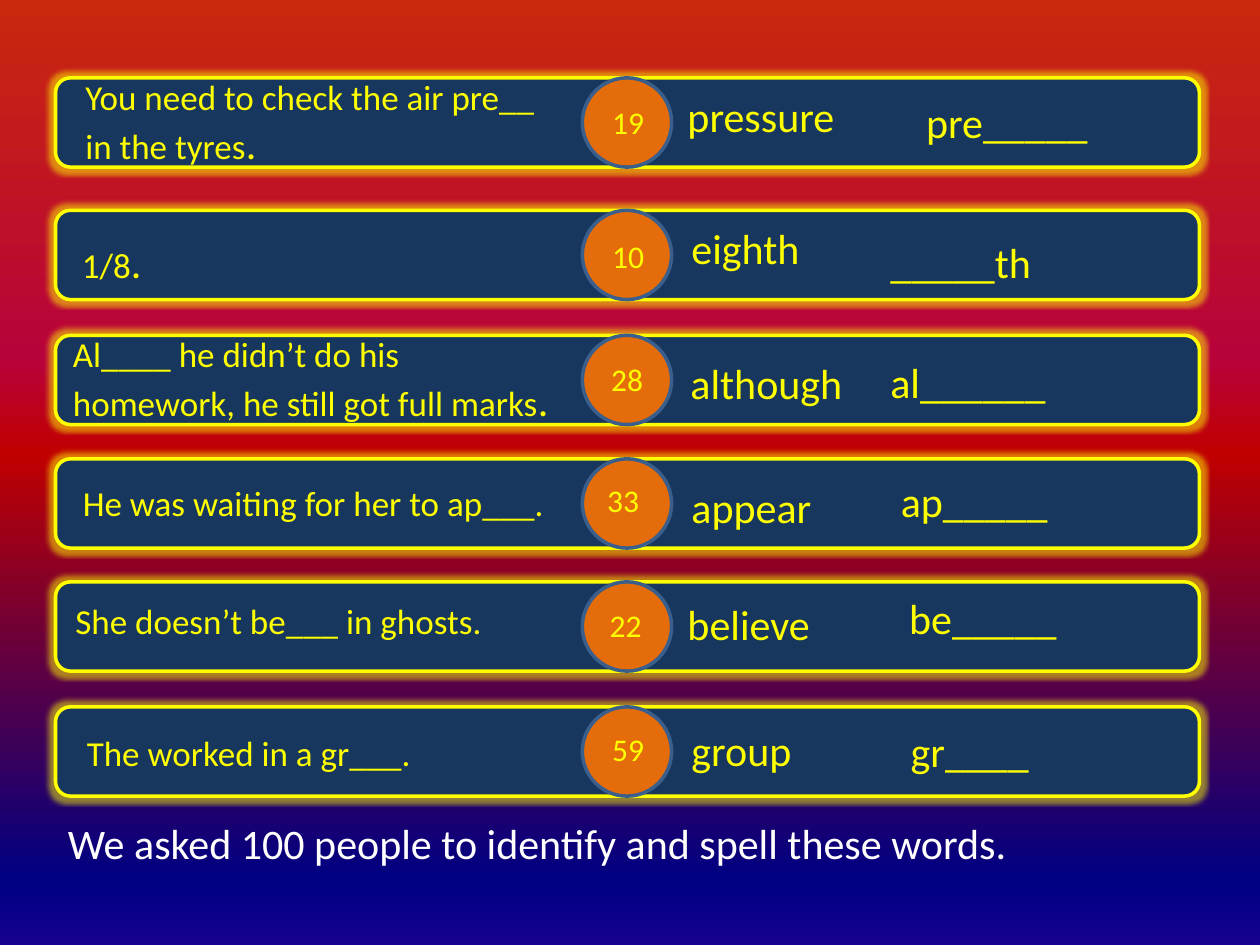
from lxml import etree
from pptx import Presentation
from pptx import util as u
from pptx.dml.color import RGBColor
from pptx.enum import shapes, text
from pptx.oxml import ns

HUES = {"bar": "17375E", "glow": "FFFF00", "disc": "E46C0A",
        "rim": "3A5F8C", "ink": "FFFF00", "foot": "FFFFFF"}
SKY = [(0, "C9280D"), (38, "B8023A"), (48, "C00000"),
       (93, "000082"), (100, "150090")]

# Each row: bar top, then clue, score, word and hint as (text, left, top) in cm
ROWS = [
    (1.57, ("You need to check the air pre__ in the tyres", 1.47, 1.4),
     ("19", 12.09, 1.96), ("pressure", 13.61, 1.7), ("pre_____", 18.42, 1.83)),
    (4.24, ("1/8", 1.4, 4.65),
     ("10", 12.09, 4.65), ("eighth", 13.69, 4.37), ("_____th", 17.7, 4.65)),
    (6.76, ("Al____ he didn’t do his homework, he still got full marks", 1.22, 6.58),
     ("28", 12.07, 7.14), ("although", 13.67, 7.09), ("al______", 17.7, 7.06)),
    (9.25, ("He was waiting for her to ap___.", 1.42, 9.58),
     ("33", 11.99, 9.58), ("appear", 13.69, 9.58), ("ap_____", 17.91, 9.47)),
    (11.73, ("She doesn’t be___ in ghosts.", 1.27, 11.96),
     ("22", 12.04, 12.09), ("believe", 13.61, 11.94), ("be_____", 18.08, 11.81)),
    (14.25, ("The worked in a gr___.", 1.5, 14.63),
     ("59", 12.09, 14.6), ("group", 13.69, 14.48), ("gr____", 18.11, 14.5)),
]
FOOT = ("We asked 100 people to identify and spell these words.", 1.12, 16.36)
BAR_X, BAR_W, DISC_X, SIZE = 1.12, 23.06, 11.74, 1.8


def rgb(name):
    return RGBColor.from_string(HUES[name])


def node(up, tag, **attrs):
    return etree.SubElement(up, ns.qn(tag), attrs)


def paint(slide):
    """Fill the background with the vertical gradient."""
    fill = slide.background.fill
    fill.gradient()
    fill.gradient_angle = 270
    stops = next(slide.element.iter(ns.qn("a:gsLst")))
    for old in list(stops):
        stops.remove(old)
    for pos, hue in SKY:
        stop = node(stops, "a:gs", pos=str(pos * 1000))
        node(stop, "a:srgbClr", val=hue)


def draw(slide, kind, left, top, wide, fill, line):
    shape = slide.shapes.add_shape(kind, u.Cm(left), u.Cm(top), u.Cm(wide), u.Cm(SIZE))
    shape.shadow.inherit = False
    shape.fill.solid()
    shape.fill.fore_color.rgb = rgb(fill)
    shape.line.color.rgb = rgb(line)
    shape.line.width = u.Pt(2)
    return shape


def shine(shape):
    """Give a shape a soft outer glow."""
    fx = shape.element.spPr.find(ns.qn("a:effectLst"))
    glow = node(fx, "a:glow", rad="63500")
    hue = node(glow, "a:srgbClr", val=HUES["glow"])
    node(hue, "a:alpha", val="50000")


def write(slide, item, wide, size, ink="ink", end=""):
    """Add a text box; end is a closing mark set at 24 points."""
    words, left, top = item
    box = slide.shapes.add_textbox(u.Cm(left), u.Cm(top), u.Cm(wide), u.Cm(size * 0.053))
    frame = box.text_frame
    frame.word_wrap = True
    frame.auto_size = text.MSO_AUTO_SIZE.SHAPE_TO_FIT_TEXT
    para = frame.paragraphs[0]
    for part, pts in ((words, size), (end, 24)):
        if part:
            run = para.add_run()
            run.text = part
            run.font.name = "Calibri"
            run.font.size = u.Pt(pts)
            run.font.color.rgb = rgb(ink)


def main():
    deck = Presentation()
    deck.slide_width, deck.slide_height = u.Cm(25.4), u.Cm(19.05)
    slide = deck.slides.add_slide(deck.slide_layouts[6])
    paint(slide)

    # Bars, discs and the four texts of each row
    for top, clue, score, word, hint in ROWS:
        bar = draw(slide, shapes.MSO_SHAPE.ROUNDED_RECTANGLE,
                   BAR_X, top, BAR_W, "bar", "glow")
        shine(bar)
        draw(slide, shapes.MSO_SHAPE.OVAL, DISC_X, top, SIZE, "disc", "rim")
        write(slide, clue, 10.1, 20, end="" if clue[0].endswith(".") else ".")
        write(slide, score, 1.2, 18)
        write(slide, word, 4.6, 24)
        write(slide, hint, 4.6, 24)

    # Closing line
    write(slide, FOOT, 21.2, 24, "foot")
    deck.save("out.pptx")


if __name__ == "__main__":
    main()
